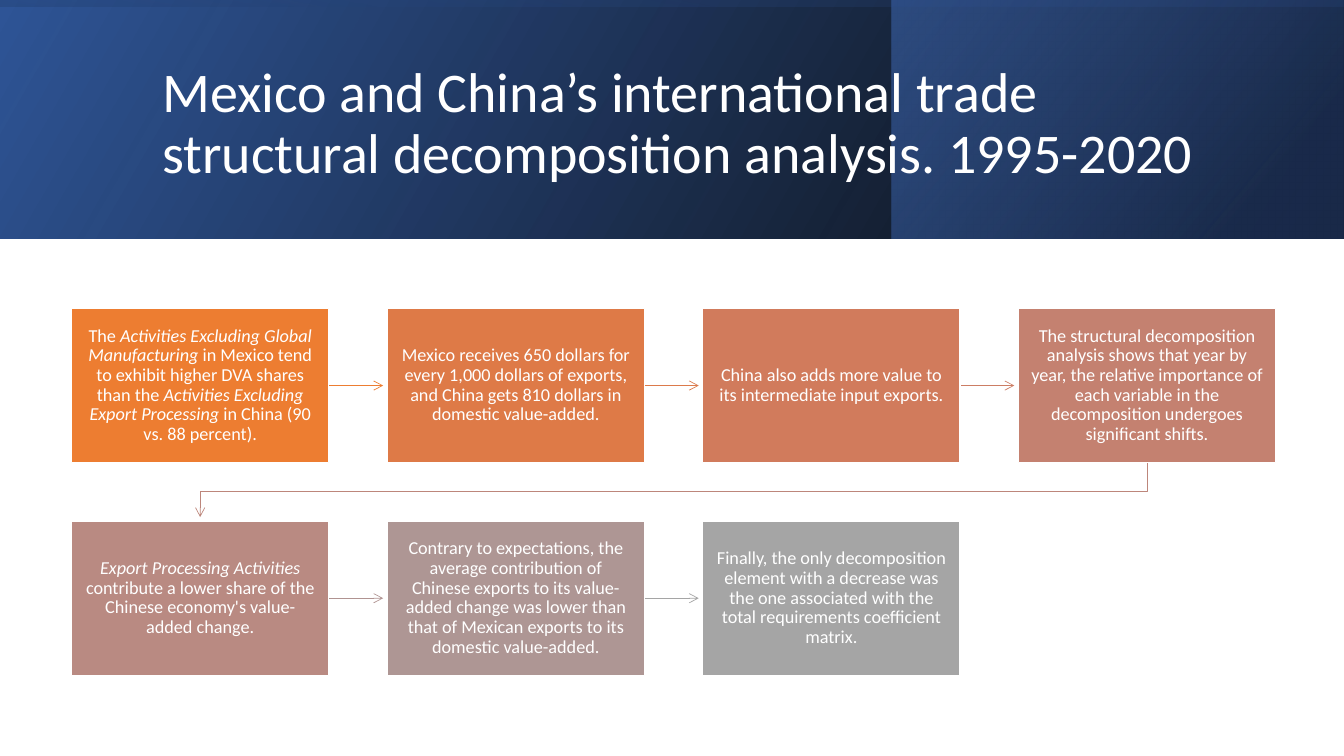
from dataclasses import dataclass

from lxml import etree
from pptx import Presentation
from pptx import util as u
from pptx.dml.color import RGBColor
from pptx.enum import shapes, text
from pptx.oxml.ns import qn

TITLE = "Mexico and China’s international trade structural decomposition analysis. 1995-2020"

BANDS = [
    dict(box=(0, 0, 13.33, 2.37), rotation=0, angle=330,
         stops=[(0, "000000", 96), (100, "2F5597", 100)]),
    dict(box=(8.84, 0, 4.48, 2.37), rotation=0, angle=320,
         stops=[(19, "203864", 68), (100, "4472C4", 48)]),
    dict(box=(5.48, -5.48, 2.37, 13.33), rotation=270, angle=350,
         stops=[(23, "2F5597", 16), (99, "000000", 45)]),
]

STEPS = [
    ("ED7D31", "ED7D31", [
        ("The ", False),
        ("Activities Excluding Global Manufacturing ", True),
        ("in Mexico tend to exhibit higher DVA shares than the ", False),
        ("Activities Excluding Export Processing ", True),
        ("in China (90 vs. 88 percent).", False)]),
    ("DE7A47", "DC7A4B", [
        ("Mexico receives 650 dollars for every 1,000 dollars of exports, "
         "and China gets 810 dollars in domestic value-added.", False)]),
    ("D17B5C", "CC7D64", [
        ("China also adds more value to its intermediate input exports.", False)]),
    ("C48170", "BD867B", [
        ("The structural decomposition analysis shows that year by year, the relative "
         "importance of each variable in the decomposition undergoes significant shifts.", False)]),
    ("B98A82", "B09391", [
        ("Export Processing Activities ", True),
        ("contribute a lower share of the Chinese economy's value-added change.", False)]),
    ("AE9694", "A5A5A5", [
        ("Contrary to expectations, the average contribution of Chinese exports to its "
         "value-added change was lower than that of Mexican exports to its domestic "
         "value-added.", False)]),
    ("A5A5A5", None, [
        ("Finally, the only decomposition element with a decrease was the one associated "
         "with the total requirements coefficient matrix.", False)]),
]


@dataclass(frozen=True)
class Theme:
    font: str = "Calibri"
    light: str = "FFFFFF"
    title_size: int = 40
    step_size: int = 13
    border: float = 1
    arrow: float = 0.5


THEME = Theme()
COLUMNS = 4
LEFT, TOP = 0.71, 3.06
WIDTH, HEIGHT = 2.55, 1.53
COLUMN_PITCH, ROW_PITCH = 3.13, 2.11
ARROW_GAP = 0.04


def inches(values):
    return [u.Inches(value) for value in values]


def style_paragraph(paragraph, size, alignment):
    paragraph.alignment = alignment
    paragraph.line_spacing = 0.9
    paragraph.font.name = THEME.font
    paragraph.font.size = u.Pt(size)
    paragraph.font.color.rgb = RGBColor.from_string(THEME.light)


def add_rectangle(slide, box):
    shape = slide.shapes.add_shape(shapes.MSO_SHAPE.RECTANGLE, *inches(box))
    shape.shadow.inherit = False
    return shape


def add_band(slide, box, rotation, angle, stops):
    shape = add_rectangle(slide, box)
    shape.rotation = rotation
    shape.line.fill.background()
    shape.fill.gradient()
    properties = shape.element.spPr
    properties.find(qn("a:xfrm")).set("flipH", "1")
    gradient = properties.find(qn("a:gradFill"))
    gradient.clear()
    gradient.set("rotWithShape", "1")
    stop_list = etree.SubElement(gradient, qn("a:gsLst"))
    for position, color, opacity in stops:
        stop = etree.SubElement(stop_list, qn("a:gs"), pos=str(position * 1000))
        fill = etree.SubElement(stop, qn("a:srgbClr"), val=color)
        etree.SubElement(fill, qn("a:alpha"), val=str(opacity * 1000))
    etree.SubElement(gradient, qn("a:lin"), ang=str(angle * 60000), scaled="0")


def add_title(slide):
    title = slide.shapes.title
    title.left, title.top, title.width, title.height = inches((1.51, 0.38, 10.63, 1.72))
    frame = title.text_frame
    frame.text = TITLE
    frame.word_wrap = True
    frame.vertical_anchor = text.MSO_ANCHOR.MIDDLE
    style_paragraph(frame.paragraphs[0], THEME.title_size, text.PP_ALIGN.LEFT)
    title.element.getparent().append(title.element)


def step_position(index):
    row, column = divmod(index, COLUMNS)
    return LEFT + column * COLUMN_PITCH, TOP + row * ROW_PITCH


def add_arrow(slide, index, color):
    x, y = step_position(index)
    next_x, next_y = step_position(index + 1)
    if next_y == y:
        middle = y + HEIGHT / 2
        arrow = slide.shapes.add_connector(
            shapes.MSO_CONNECTOR.STRAIGHT,
            *inches((x + WIDTH, middle, next_x - ARROW_GAP, middle)))
        etree.SubElement(arrow.element.spPr, qn("a:effectLst"))
    else:
        start_x, end_x = x + WIDTH / 2, next_x + WIDTH / 2
        turn_y = (y + HEIGHT + next_y) / 2
        builder = slide.shapes.build_freeform(*inches((start_x, y + HEIGHT)))
        corners = [(start_x, turn_y), (end_x, turn_y), (end_x, next_y - ARROW_GAP)]
        builder.add_line_segments([inches(corner) for corner in corners], close=False)
        arrow = builder.convert_to_shape()
        arrow.fill.background()
        arrow.shadow.inherit = False
    arrow.line.color.rgb = RGBColor.from_string(color)
    arrow.line.width = u.Pt(THEME.arrow)
    line = arrow.element.spPr.find(qn("a:ln"))
    etree.SubElement(line, qn("a:tailEnd"), type="arrow")


def add_step(slide, index, color, runs):
    shape = add_rectangle(slide, (*step_position(index), WIDTH, HEIGHT))
    shape.fill.solid()
    shape.fill.fore_color.rgb = RGBColor.from_string(color)
    shape.line.color.rgb = RGBColor.from_string(THEME.light)
    shape.line.width = u.Pt(THEME.border)
    frame = shape.text_frame
    frame.word_wrap = True
    frame.vertical_anchor = text.MSO_ANCHOR.MIDDLE
    frame.margin_left = frame.margin_right = u.Inches(0.12)
    frame.margin_top = frame.margin_bottom = u.Inches(0.13)
    paragraph = frame.paragraphs[0]
    style_paragraph(paragraph, THEME.step_size, text.PP_ALIGN.CENTER)
    for words, italic in runs:
        run = paragraph.add_run()
        run.text = words
        run.font.italic = italic


def main():
    presentation = Presentation()
    presentation.slide_width, presentation.slide_height = inches((13.33, 7.5))
    slide = presentation.slides.add_slide(presentation.slide_layouts[5])
    for band in BANDS:
        add_band(slide, **band)
    add_title(slide)
    for index, (color, arrow_color, runs) in enumerate(STEPS):
        if arrow_color:
            add_arrow(slide, index, arrow_color)
        add_step(slide, index, color, runs)
    presentation.save("out.pptx")


if __name__ == "__main__":
    main()
